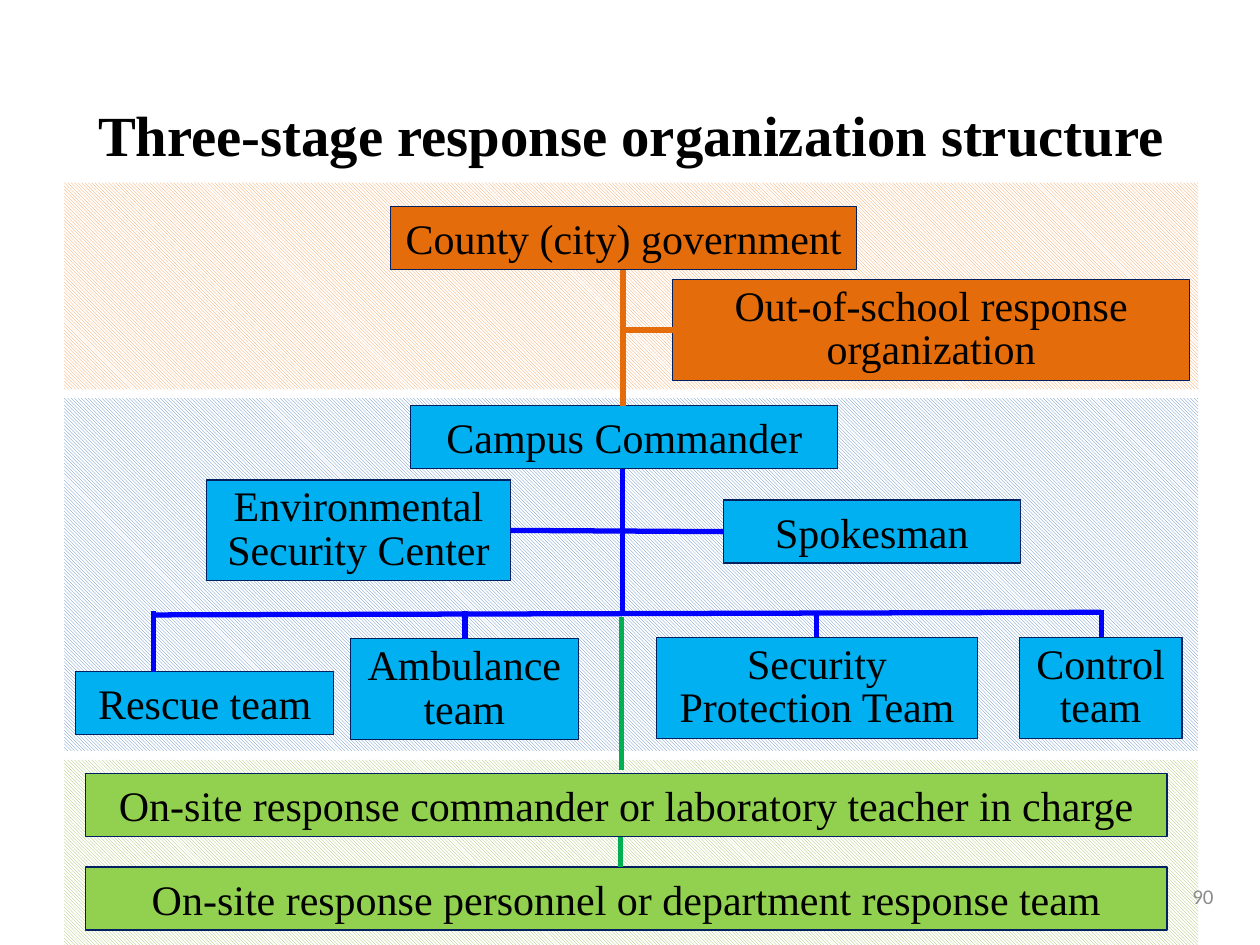
from lxml.etree import SubElement
from pptx import Presentation as Deck
from pptx.dml.color import RGBColor as Rgb
from pptx.enum.dml import MSO_PATTERN as Hatch
from pptx.enum.shapes import MSO_CONNECTOR as Link, MSO_SHAPE as Form
from pptx.enum.text import MSO_ANCHOR as Anchor, MSO_AUTO_SIZE as Fit, PP_ALIGN as Align
from pptx.oxml.ns import qn
from pptx.util import Pt

ORANGE, SKY, LIME = "E46C0A", "00B0F0", "92D050"
BLUE, GREEN = "0000FF", "00B050"
SHORT, TALL = 36, 57.6
LEFT, WIDE = 36.7, 648
TRUNK = 356

BANDS = [
    (434.2, 111.6, "9BBB59"),
    (227.5, 201.6, "4F81BD"),
    (104.4, 118.1, "F79646"),
]
BOXES = [
    ("County (city) government", 223.2, 118.1, 266.4, SHORT, ORANGE),
    ("Out-of-school response organization", 384.5, 159.8, 295.2, TALL, ORANGE),
    ("Campus Commander", 234.7, 231.8, 244.1, SHORT, SKY),
    ("Spokesman", 413.3, 285.8, 169.9, SHORT, SKY),
    ("Environmental Security Center", 118.1, 274.3, 173.5, TALL, SKY),
    ("Rescue team", 43.2, 383.8, 147.6, SHORT, SKY),
    ("Ambulance\nteam", 200.2, 365, 130.3, TALL, SKY),
    ("Security Protection Team", 375.1, 364.3, 183.6, TALL, SKY),
    ("Control\nteam", 582.5, 364.3, 92.9, TALL, SKY),
    ("On-site response commander or laboratory teacher in charge",
     49, 442.1, 617.8, SHORT, LIME),
    ("On-site response personnel or department response team",
     49, 495.4, 617.8, SHORT, LIME),
]
LINES = [
    (TRUNK, 154.4, TRUNK, 231.8, ORANGE),
    (384.5, 188.6, TRUNK, 188.6, ORANGE),
    (355.6, 267.8, 355.6, 350.6, BLUE),
    (87.8, 351.4, 629.3, 349.9, BLUE),
    (291.6, 303.1, 413.3, 303.8, BLUE),
    (87.8, 383.8, 87.8, 349.2, BLUE),
    (265.7, 365, 265.7, 349.2, BLUE),
    (466.6, 364.3, 466.6, 350.6, BLUE),
    (629.3, 348.5, 629.3, 364.3, BLUE),
    (355, 352.8, 355, 439.9, GREEN),
    (354.6, 478.1, 354.6, 495.4, GREEN),
]


def tint(code):
    """Turn a hex string into a colour."""
    return Rgb.from_string(code)


def apply(thing, vals):
    """Set each value of a dict as an attribute."""
    for key, val in vals.items():
        setattr(thing, key, val)


class Chart:
    """Hold the style and the slide, and draw each kind of element."""

    face = {"name": "Times New Roman", "size": Pt(24), "bold": False}
    frame = {"word_wrap": True, "auto_size": Fit.SHAPE_TO_FIT_TEXT,
             "vertical_anchor": Anchor.TOP}
    fixed = {"auto_size": Fit.NONE, "vertical_anchor": Anchor.MIDDLE}

    def __init__(self, slide):
        """Keep the slide to draw on."""
        self.slide = slide

    def letter(self, shape, text, font=None, para=None, frame=None, code="000000"):
        """Put styled text into a shape."""
        body = shape.text_frame
        body.text = text
        apply(body, {**self.frame, **(frame or {})})
        for item in body.paragraphs:
            apply(item, {"alignment": Align.CENTER, **(para or {})})
            apply(item.font, {**self.face, **(font or {})})
            item.font.color.rgb = tint(code)

    def title(self, text, spot):
        """Move and fill the title."""
        shape = self.slide.shapes.title
        apply(shape, dict(zip(("left", "top", "width", "height"), map(Pt, spot))))
        self.letter(shape, text, {"size": Pt(32.4), "bold": True}, frame=self.fixed)

    def label(self, text, spot):
        """Add the small page number."""
        shape = self.slide.shapes.add_textbox(*map(Pt, spot))
        self.letter(shape, text, {"name": "Calibri", "size": Pt(12)},
                    {"alignment": Align.RIGHT}, self.fixed, "8C8C8C")

    def block(self, spot):
        """Add a plain rectangle."""
        shape = self.slide.shapes.add_shape(Form.RECTANGLE, *map(Pt, spot))
        shape.shadow.inherit = False
        return shape

    def band(self, top, high, code):
        """Add a hatched stage band."""
        shape = self.block((LEFT, top, WIDE, high))
        shape.line.fill.background()
        shape.fill.patterned()
        shape.fill.pattern = Hatch.LIGHT_DOWNWARD_DIAGONAL
        shape.fill.fore_color.rgb = tint(code)
        shape.fill.back_color.rgb = tint("FFFFFF")

    def box(self, text, left, top, wide, high, code):
        """Add a filled unit box."""
        shape = self.block((left, top, wide, high))
        shape.fill.solid()
        shape.fill.fore_color.rgb = tint(code)
        shape.line.color.rgb = tint("002060")
        shape.line.width = Pt(0.75)
        self.letter(shape, text, para={"line_spacing": Pt(25)} if high == TALL else None)

    def line(self, left, top, right, base, code):
        """Add a straight link."""
        ends = map(Pt, (left, top, right, base))
        link = self.slide.shapes.add_connector(Link.STRAIGHT, *ends)
        link.line.color.rgb = tint(code)
        link.line.width = Pt(3)
        SubElement(link._element.spPr, qn("a:effectLst"))


def main():
    """Build and save the slide."""
    deck = Deck()
    apply(deck, {"slide_width": Pt(720), "slide_height": Pt(540)})
    chart = Chart(deck.slides.add_slide(deck.slide_layouts[5]))
    for row in BANDS:
        chart.band(*row)
    chart.title("Three-stage response organization structure", (LEFT, 49, WIDE, 54.7))
    chart.label("90", (532.8, 497.5, 167.8, 28.8))
    for row in BOXES:
        chart.box(*row)
    for row in LINES:
        chart.line(*row)
    deck.save("out.pptx")


if __name__ == "__main__":
    main()
